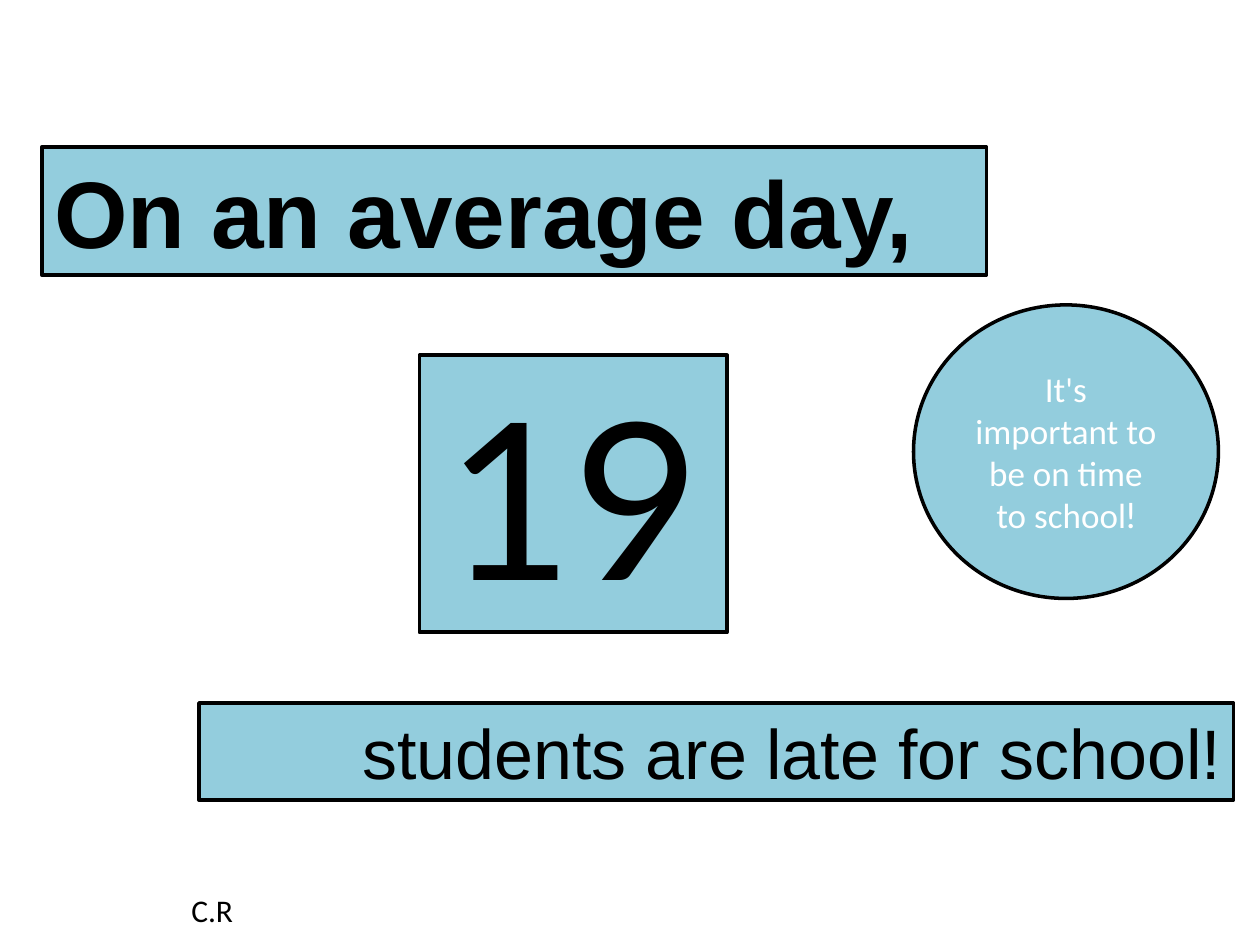
"""Build a slide on how many students are late for school on an average day."""
from pptx import Presentation
from pptx import util as u
from pptx.dml.color import RGBColor
from pptx.enum import shapes, text

PX = 9144
COLORS = {"panel": "93CDDD", "ink": "000000", "light": "FFFFFF"}


def color(name):
    return RGBColor.from_string(COLORS[name])


class SlideBuilder:
    def __init__(self, slide):
        self.slide = slide

    def paint(self, shape, line_width=2.25):
        shape.fill.solid()
        shape.fill.fore_color.rgb = color("panel")
        shape.line.color.rgb = color("ink")
        shape.line.width = u.Pt(line_width)

    def set_text(self, shape, wording, size, font="Calibri", ink="ink", bold=False,
                 align=text.PP_ALIGN.LEFT, anchor=text.MSO_ANCHOR.TOP,
                 fit=text.MSO_AUTO_SIZE.SHAPE_TO_FIT_TEXT):
        frame = shape.text_frame
        frame.word_wrap = True
        frame.auto_size = fit
        frame.vertical_anchor = anchor
        paragraph = frame.paragraphs[0]
        paragraph.text = wording
        paragraph.alignment = align
        paragraph.font.name = font
        paragraph.font.size = u.Pt(size)
        paragraph.font.bold = bold
        paragraph.font.color.rgb = color(ink)
        return paragraph

    def title(self, box, wording, size, **style):
        shape = self.slide.shapes.title
        shape.left, shape.top, shape.width, shape.height = (n * PX for n in box)
        self.paint(shape)
        return self.set_text(shape, wording, size, **style)

    def panel(self, kind, box, wording, size, line_width=2.25, **style):
        shape = self.slide.shapes.add_shape(kind, *(n * PX for n in box))
        shape.shadow.inherit = False
        self.paint(shape, line_width)
        return self.set_text(shape, wording, size, **style)

    def label(self, box, wording, size, **style):
        shape = self.slide.shapes.add_textbox(*(n * PX for n in box))
        return self.set_text(shape, wording, size, **style)


def main():
    presentation = Presentation()
    presentation.slide_width = 1000 * PX
    presentation.slide_height = 750 * PX
    slide = presentation.slides.add_slide(presentation.slide_layouts[5])
    builder = SlideBuilder(slide)
    rectangle = shapes.MSO_SHAPE.RECTANGLE

    builder.title((33, 117, 750, 101), "On an average day,", 54, font="Arial", bold=True)
    builder.panel(rectangle, (158, 558, 821, 77), "students are late for school!", 40,
                  font="Arial", align=text.PP_ALIGN.RIGHT)
    builder.panel(rectangle, (333, 282, 244, 220), "19", 125,
                  font="Lato", align=text.PP_ALIGN.CENTER)
    reminder = builder.panel(
        shapes.MSO_SHAPE.OVAL, (725, 242, 242, 233),
        "It's important to be on time to school", 20, line_width=2, ink="light",
        align=text.PP_ALIGN.CENTER, anchor=text.MSO_ANCHOR.MIDDLE,
        fit=text.MSO_AUTO_SIZE.NONE)
    exclamation = reminder.add_run()
    exclamation.text = "!"
    exclamation.font.name = "Lato"
    builder.label((142, 702, 83, 40), "C.R", 18)

    presentation.save("out.pptx")


if __name__ == "__main__":
    main()
